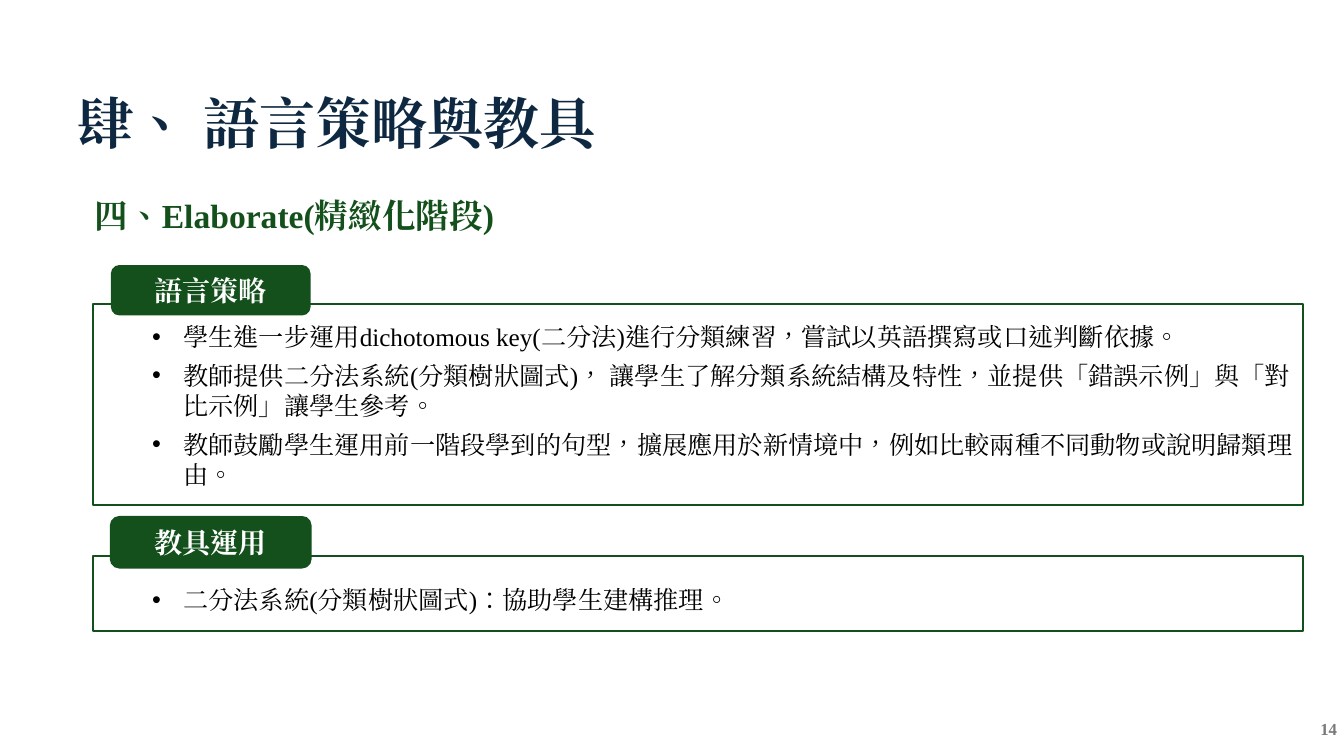
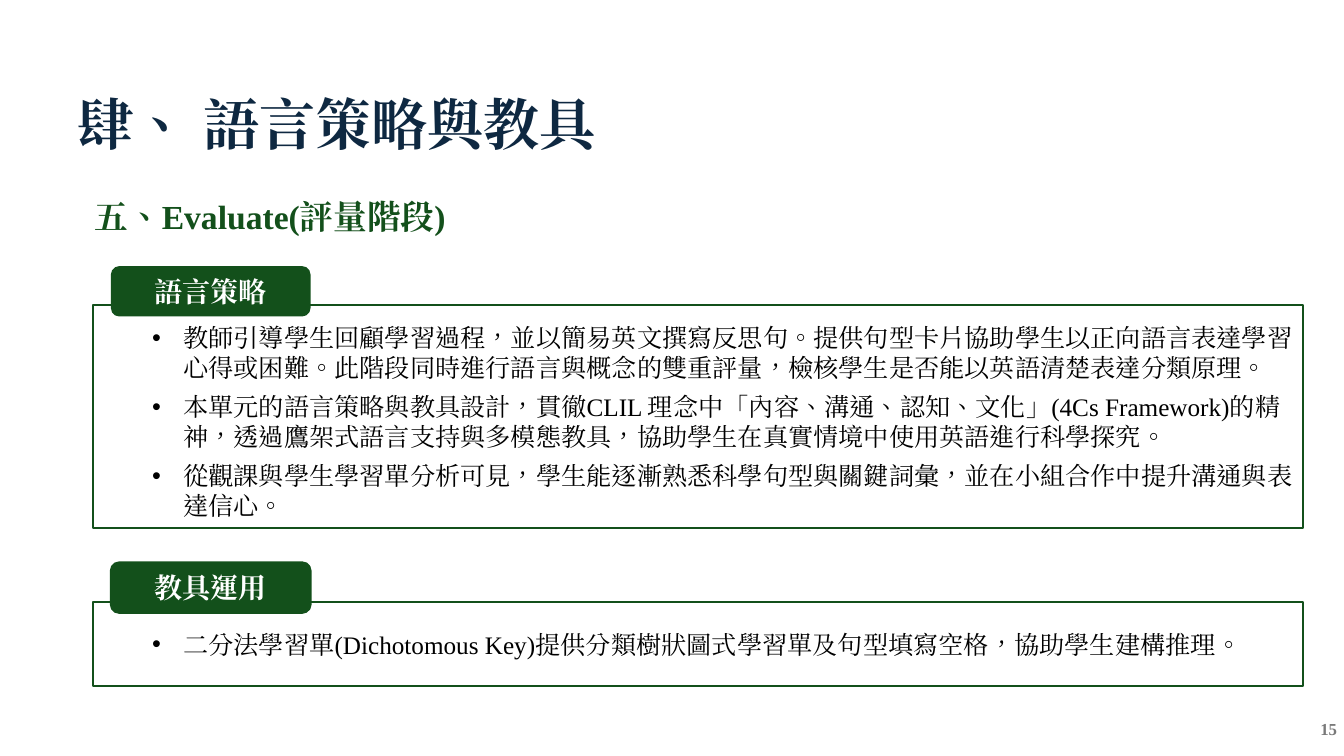
from lxml import etree
from pptx import Presentation
from pptx.dml.color import RGBColor
from pptx.enum.lang import MSO_LANGUAGE_ID
from pptx.enum.shapes import MSO_SHAPE
from pptx.enum.text import MSO_ANCHOR, PP_ALIGN
from pptx.oxml.ns import qn
from pptx.util import Inches, Pt

RECT, ROUNDED = MSO_SHAPE.RECTANGLE, MSO_SHAPE.ROUNDED_RECTANGLE
TOP, MIDDLE = MSO_ANCHOR.TOP, MSO_ANCHOR.MIDDLE
LEFT, CENTER, RIGHT = PP_ALIGN.LEFT, PP_ALIGN.CENTER, PP_ALIGN.RIGHT
CHINESE = MSO_LANGUAGE_ID.TRADITIONAL_CHINESE

# Content: "top" is the title's top; each panel has its box top and height
TITLE = "肆、 語言策略與教具"
SLIDES = [
    {
        "number": "14", "top": 0.63, "stage": "四、Elaborate(精緻化階段)",
        "panels": [
            {"label": "語言策略", "top": 3.02, "height": 1.99, "pad": 0.12, "points": [
                "學生進一步運用dichotomous key(二分法)進行分類練習，嘗試以英語撰寫或口述判斷依據。",
                "教師提供二分法系統(分類樹狀圖式)， 讓學生了解分類系統結構及特性，"
                "並提供「錯誤示例」與「對比示例」讓學生參考。",
                "教師鼓勵學生運用前一階段學到的句型，擴展應用於新情境中，"
                "例如比較兩種不同動物或說明歸類理由。",
            ]},
            {"label": "教具運用", "top": 5.52, "height": 0.74, "pad": 0.23, "tab_line": 1.5,
             "points": ["二分法系統(分類樹狀圖式)：協助學生建構推理。"]},
        ],
    },
    {
        "number": "15", "top": 0.64, "stage": "五、Evaluate(評量階段)",
        "panels": [
            {"label": "語言策略", "top": 3.03, "height": 2.21, "pad": 0.12, "points": [
                "教師引導學生回顧學習過程，並以簡易英文撰寫反思句。"
                "提供句型卡片協助學生以正向語言表達學習心得或困難。"
                "此階段同時進行語言與概念的雙重評量，檢核學生是否能以英語清楚表達分類原理。",
                "本單元的語言策略與教具設計，貫徹CLIL 理念中「內容、溝通、認知、文化」"
                "(4Cs Framework)的精神，透過鷹架式語言支持與多模態教具，"
                "協助學生在真實情境中使用英語進行科學探究。",
                "從觀課與學生學習單分析可見，學生能逐漸熟悉科學句型與關鍵詞彙，"
                "並在小組合作中提升溝通與表達信心。",
            ]},
            {"label": "教具運用", "top": 5.97, "height": 0.84, "pad": 0.22, "tab_line": 1.5,
             "points": ["二分法學習單(Dichotomous Key)提供分類樹狀圖式學習單及句型填寫空格，"
                        "協助學生建構推理。"]},
        ],
    },
]

THEME = {
    "font": "Times New Roman",
    "green": RGBColor.from_string("13501B"),
    "white": RGBColor.from_string("FFFFFF"),
    "title": {"size": 40, "color": "0E2841", "bold": True},
    "stage": {"size": 24, "color": "13501B", "bold": True},
    "label": {"size": 20, "color": "FFFFFF", "bold": True},
    "body": {"size": 18, "color": "000000", "bold": False},
    "number": {"size": 12, "color": "797979", "bold": True},
}

# Layout in inches
SLIDE_W, SLIDE_H = 13.33, 7.5
BOX_LEFT, BOX_W = 0.92, 12
TAB_LEFT, TAB_W, TAB_H, TAB_RISE = 1.1, 1.98, 0.5, 0.39
BODY_LEFT = 1.41
INDENT, POINT_GAP = 0.31, 6


def write(shape, lines, style, align=LEFT, anchor=TOP, bullets=False):
    """Fill a shape with one paragraph per line in a theme style."""
    look = THEME[style]
    tf = shape.text_frame
    tf.word_wrap = True
    tf.vertical_anchor = anchor
    for i, line in enumerate(lines):
        p = tf.paragraphs[0] if i == 0 else tf.add_paragraph()
        p.alignment = align
        if bullets:
            add_bullet(p)
        r = p.add_run()
        r.text = line
        formats = {"name": THEME["font"], "size": Pt(look["size"]),
                   "bold": look["bold"], "language_id": CHINESE}
        for name, value in formats.items():
            setattr(r.font, name, value)
        r.font.color.rgb = RGBColor.from_string(look["color"])
        etree.SubElement(r._r.get_or_add_rPr(), qn("a:ea"), typeface=THEME["font"])


def add_bullet(p):
    p.space_after = Pt(POINT_GAP)
    pPr = p._p.get_or_add_pPr()
    pPr.set("marL", str(Inches(INDENT)))
    pPr.set("indent", str(-Inches(INDENT)))
    etree.SubElement(pPr, qn("a:buFont"), typeface="Arial")
    etree.SubElement(pPr, qn("a:buChar"), char="•")


def add_text(s, box, lines, style, **options):
    write(s.shapes.add_textbox(*map(Inches, box)), lines, style, **options)


def add_block(s, kind, box, fill, line_width):
    sp = s.shapes.add_shape(kind, *map(Inches, box))
    sp.shadow.inherit = False
    sp.fill.solid()
    sp.fill.fore_color.rgb = fill
    if line_width:
        sp.line.color.rgb = THEME["green"]
        sp.line.width = Pt(line_width)
    else:
        sp.line.fill.background()
    return sp


def add_panel(s, panel):
    """Outlined box with bullet points and a label tab over its top edge."""
    top, height, pad = panel["top"], panel["height"], panel["pad"]
    add_block(s, RECT, (BOX_LEFT, top, BOX_W, height), THEME["white"], 1.5)
    body = (BODY_LEFT, top + pad, BOX_LEFT + BOX_W - BODY_LEFT, height - pad)
    add_text(s, body, panel["points"], "body", bullets=True)
    tab = add_block(s, ROUNDED, (TAB_LEFT, top - TAB_RISE, TAB_W, TAB_H),
                    THEME["green"], panel.get("tab_line"))
    write(tab, [panel["label"]], "label", align=CENTER, anchor=MIDDLE)


def add_slide(prs, content):
    s = prs.slides.add_slide(prs.slide_layouts[6])
    top = content["top"]
    # Headings
    add_text(s, (0.67, top, 12, 1.17), [TITLE], "title", anchor=MIDDLE)
    add_text(s, (0.84, top + 1.25, 6.67, 0.5), [content["stage"]], "stage")
    # Panels
    for panel in content["panels"]:
        add_panel(s, panel)
    # Page number
    add_text(s, (12.25, 7.03, 1.11, 0.4), [content["number"]], "number",
             align=RIGHT, anchor=MIDDLE)


def main():
    prs = Presentation()
    prs.slide_width, prs.slide_height = Inches(SLIDE_W), Inches(SLIDE_H)
    for content in SLIDES:
        add_slide(prs, content)
    prs.save("out.pptx")


if __name__ == "__main__":
    main()
